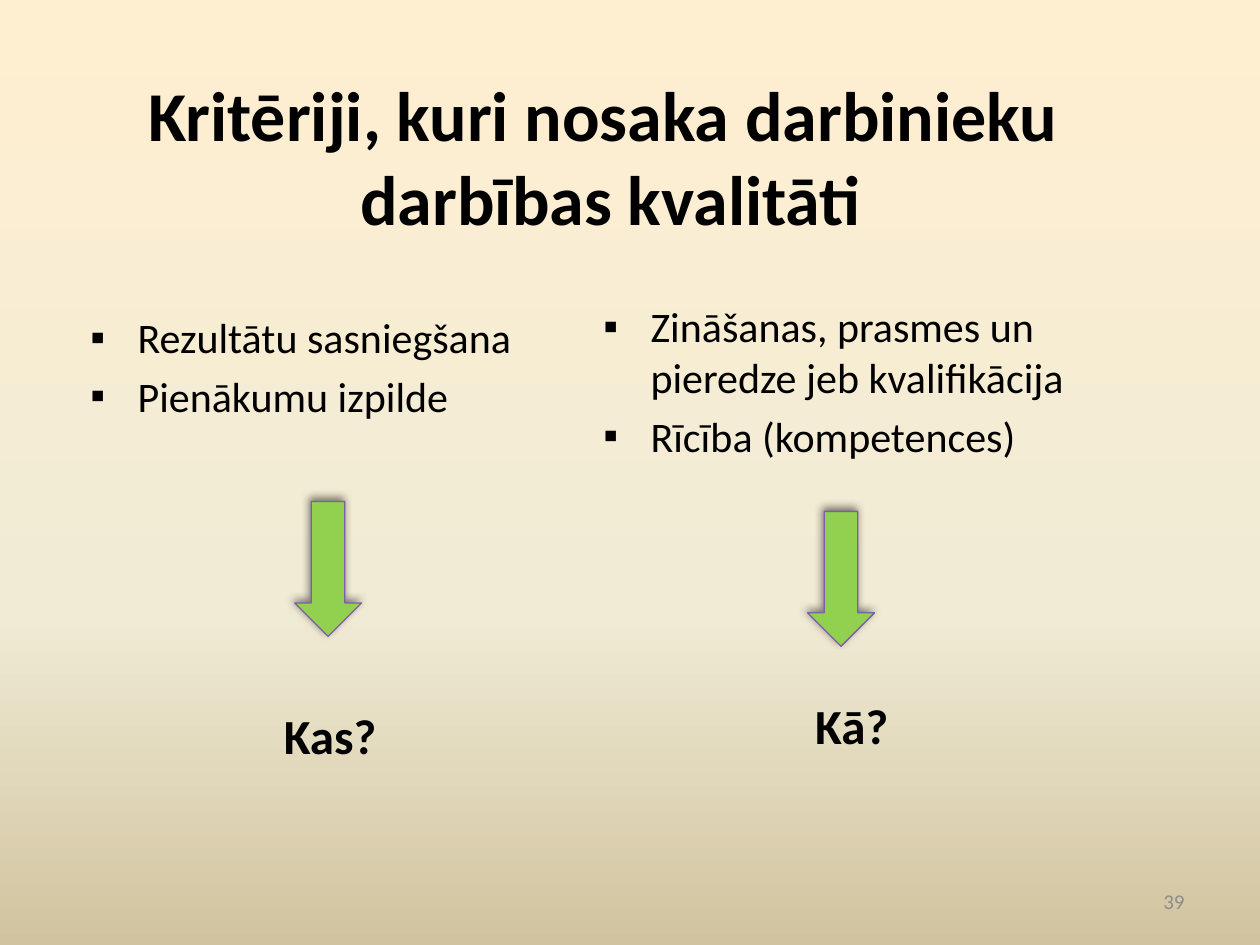
"""Build the slide on criteria for the quality of employees' work."""
from copy import deepcopy
from dataclasses import dataclass

from lxml import etree
from pptx import Presentation
from pptx import util as u
from pptx.dml.color import RGBColor
from pptx.enum import shapes, text
from pptx.oxml import parse_xml
from pptx.oxml.ns import nsdecls, qn

FONT = "Calibri"
BLACK = RGBColor(0x00, 0x00, 0x00)
GREY = RGBColor(0x8C, 0x8C, 0x8C)
GREEN = RGBColor(0x92, 0xD0, 0x50)
PURPLE = RGBColor(0x7F, 0x5E, 0xA8)
BACKDROP = (
    (0, RGBColor(0xFF, 0xEF, 0xD1)),
    (0.65, RGBColor(0xF0, 0xEB, 0xD5)),
    (1, RGBColor(0xD1, 0xC3, 0x9F)),
)
ARROW_SIZE = (1.35, 2.72)
INDENT = u.Cm(0.95)
SHADOW = (
    f'<a:effectLst {nsdecls("a")}>'
    f'<a:outerShdw blurRad="{u.Pt(5)}" dist="{u.Pt(2)}" dir="{245 * 60000}" rotWithShape="0">'
    '<a:srgbClr val="000000"><a:alpha val="50000"/></a:srgbClr>'
    "</a:outerShdw></a:effectLst>"
)


@dataclass(frozen=True)
class Area:
    left: float
    top: float
    width: float
    height: float

    def lengths(self) -> tuple:
        return tuple(u.Cm(n) for n in (self.left, self.top, self.width, self.height))


@dataclass(frozen=True)
class Criterion:
    points: tuple
    points_area: Area
    arrow_area: Area
    question: str
    question_area: Area


CRITERIA = (
    Criterion(
        ("Rezultātu sasniegšana", "Pienākumu izpilde"),
        Area(1.57, 6.15, 10.31, 5.56),
        Area(5.94, 10.11, *ARROW_SIZE),
        "Kas?",
        Area(4.37, 14.1, 4.57, 1.45),
    ),
    Criterion(
        ("Zināšanas, prasmes un pieredze jeb kvalifikācija", "Rīcība (kompetences)"),
        Area(11.91, 5.94, 11.43, 5.16),
        Area(16.28, 10.31, *ARROW_SIZE),
        "Kā?",
        Area(15.29, 13.89, 3.76, 1.45),
    ),
)


def paint_background(page) -> None:
    fill = page.background.fill
    fill.gradient()
    fill.gradient_angle = 270
    stop_list = page.element.find(".//" + qn("a:gsLst"))
    stop_list.append(deepcopy(stop_list[-1]))
    for stop, (position, colour) in zip(fill.gradient_stops, BACKDROP):
        stop.position = position
        stop.color.rgb = colour


def place(box, area: Area) -> None:
    box.left, box.top, box.width, box.height = area.lengths()


def write(box, wording: str, size: float, align=None, bold: bool = False,
          colour: RGBColor = BLACK) -> None:
    frame = box.text_frame
    frame.text = wording
    frame.word_wrap = True
    frame.auto_size = text.MSO_AUTO_SIZE.NONE
    for para in frame.paragraphs:
        para.alignment = align
        for span in para.runs:
            span.font.name = FONT
            span.font.size = u.Pt(size)
            span.font.bold = bold
            span.font.color.rgb = colour


def add_label(page, area: Area, wording: str, size: float, align, bold: bool = False,
              colour: RGBColor = BLACK):
    box = page.shapes.add_textbox(*area.lengths())
    write(box, wording, size, align, bold, colour)
    return box


def fill_points(box, criterion: Criterion) -> None:
    place(box, criterion.points_area)
    write(box, "\n".join(criterion.points), 24)
    for para in box.text_frame.paragraphs:
        properties = para._p.get_or_add_pPr()
        properties.set("marL", str(INDENT))
        properties.set("indent", str(-INDENT))
        etree.SubElement(properties, qn("a:buChar")).set("char", "▪")


def add_arrow(page, area: Area) -> None:
    arrow = page.shapes.add_shape(shapes.MSO_SHAPE.DOWN_ARROW, *area.lengths())
    arrow.fill.solid()
    arrow.fill.fore_color.rgb = GREEN
    arrow.line.color.rgb = PURPLE
    arrow.line.width = u.Pt(0.75)
    arrow._element.spPr.append(parse_xml(SHADOW))


def main() -> None:
    deck = Presentation()
    deck.slide_width, deck.slide_height = u.Cm(25.4), u.Cm(19.05)
    page = deck.slides.add_slide(deck.slide_layouts[3])
    paint_background(page)

    title = page.shapes.title
    place(title, Area(1.4, 1.78, 21.82, 3.18))
    write(title, "Kritēriji, kuri nosaka darbinieku \vdarbības kvalitāti", 40,
          text.PP_ALIGN.CENTER, bold=True)
    title.text_frame.vertical_anchor = text.MSO_ANCHOR.BOTTOM

    for index, criterion in enumerate(CRITERIA, start=1):
        fill_points(page.placeholders[index], criterion)
        add_arrow(page, criterion.arrow_area)
        add_label(page, criterion.question_area, criterion.question, 28,
                  text.PP_ALIGN.CENTER, bold=True)

    number = add_label(page, Area(18.21, 17.65, 5.92, 1.02), "39", 12,
                       text.PP_ALIGN.RIGHT, colour=GREY)
    number.text_frame.vertical_anchor = text.MSO_ANCHOR.MIDDLE
    deck.save("out.pptx")


if __name__ == "__main__":
    main()
